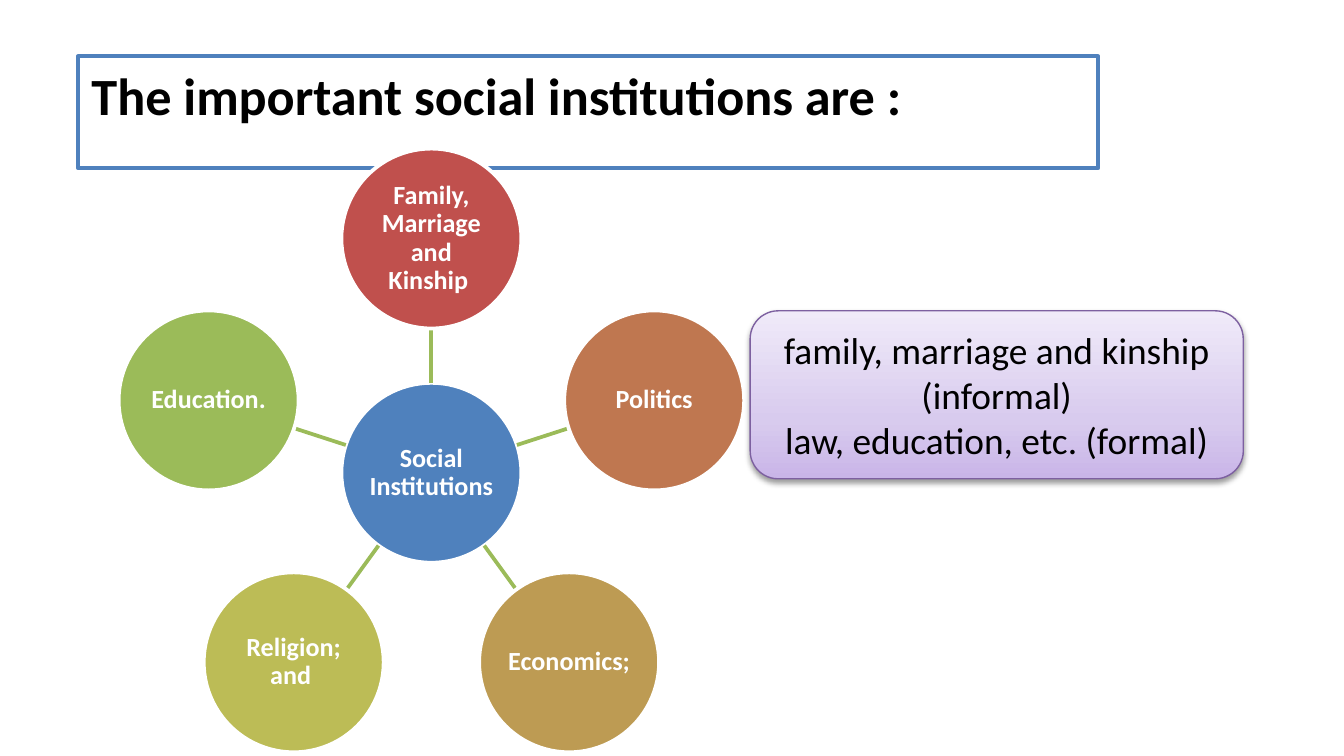
from copy import deepcopy
from dataclasses import dataclass
from math import cos, radians, sin

from lxml.etree import SubElement
from pptx import Presentation
from pptx.dml.color import RGBColor
from pptx.enum.shapes import MSO_CONNECTOR, MSO_SHAPE
from pptx.enum.text import MSO_ANCHOR, MSO_AUTO_SIZE, PP_ALIGN
from pptx.oxml.ns import qn
from pptx.util import Pt


@dataclass(frozen=True)
class Theme:
    font: str = "Calibri"
    title_size: int = 28
    note_size: int = 20
    circle_size: int = 14
    ink: str = "000000"
    paper: str = "FFFFFF"
    blue: str = "4F81BD"
    green: str = "9BBB59"
    note_line: str = "7D60A0"
    note_gradient: tuple = ((0, "C9B5E8"), (0.35, "D8CBEE"), (1, "F0EAF9"))


THEME = Theme()
HUB = (231.1, 253.3)
DIAMETER = 96.4
ORBIT = 125.5
SPOKE_START, SPOKE_END = 48.2, 77
# Clockwise from the top
INSTITUTIONS = (
    ("Family, Marriage and Kinship ", "C0504D"),
    ("Politics", "BF7750"),
    ("Economics;", "BD9B53"),
    ("Religion; and ", "BCBC56"),
    ("Education.", THEME.green),
)


def around_hub(distance, angle):
    """Point at a distance from the hub, angle in degrees clockwise from the top."""
    turn = radians(angle)
    return HUB[0] + distance * sin(turn), HUB[1] - distance * cos(turn)


class SlideBuilder:
    def __init__(self, page, theme):
        self.page = page
        self.theme = theme

    def style_line(self, line, color, width):
        line.color.rgb = RGBColor.from_string(color)
        line.width = Pt(width)

    def style_box(self, box, fill, line, width):
        box.fill.solid()
        box.fill.fore_color.rgb = RGBColor.from_string(fill)
        self.style_line(box.line, line, width)

    def set_text(self, frame, lines, size, color, bold=False, align=PP_ALIGN.CENTER, spacing=1.0):
        frame.word_wrap = True
        frame.text = "\n".join(lines)
        for para in frame.paragraphs:
            para.alignment = align
            para.line_spacing = spacing
            font = para.font
            font.name = self.theme.font
            font.size = Pt(size)
            font.bold = bold
            font.color.rgb = RGBColor.from_string(color)

    def title(self, text, left, top, width, height):
        box = self.page.shapes.title
        box.left, box.top, box.width, box.height = map(Pt, (left, top, width, height))
        self.style_box(box, self.theme.paper, self.theme.blue, 2)
        frame = box.text_frame
        self.set_text(frame, [text], self.theme.title_size, self.theme.ink, True, PP_ALIGN.LEFT)
        frame.vertical_anchor = MSO_ANCHOR.TOP
        frame.auto_size = MSO_AUTO_SIZE.SHAPE_TO_FIT_TEXT

    def circle(self, text, center, fill):
        left, top = (value - DIAMETER / 2 for value in center)
        box = self.page.shapes.add_shape(
            MSO_SHAPE.OVAL, Pt(left), Pt(top), Pt(DIAMETER), Pt(DIAMETER))
        box.shadow.inherit = False
        self.style_box(box, fill, self.theme.paper, 2)
        frame = box.text_frame
        frame.margin_left = frame.margin_right = Pt(0.7)
        frame.margin_top = frame.margin_bottom = Pt(0.7)
        frame.vertical_anchor = MSO_ANCHOR.MIDDLE
        self.set_text(frame, [text], self.theme.circle_size, self.theme.paper, True, spacing=0.9)

    def spoke(self, start, end):
        line = self.page.shapes.add_connector(
            MSO_CONNECTOR.STRAIGHT, *(Pt(value) for value in (*start, *end)))
        self.style_line(line.line, self.theme.green, 2)
        SubElement(line._element.spPr, qn("a:effectLst"))

    def note(self, lines, left, top, width, height):
        box = self.page.shapes.add_shape(
            MSO_SHAPE.ROUNDED_RECTANGLE, Pt(left), Pt(top), Pt(width), Pt(height))
        self.shade(box)
        self.style_line(box.line, self.theme.note_line, 0.75)
        self.drop_shadow(box)
        box.text_frame.vertical_anchor = MSO_ANCHOR.MIDDLE
        self.set_text(box.text_frame, lines, self.theme.note_size, self.theme.ink)

    def shade(self, box):
        """Fill the box with the note gradient, running from bottom to top."""
        box.fill.gradient()
        box.fill.gradient_angle = 90
        stop_list = box._element.spPr.find(qn("a:gradFill")).find(qn("a:gsLst"))
        stop_list.append(deepcopy(stop_list[0]))
        for stop, (position, color) in zip(box.fill.gradient_stops, self.theme.note_gradient):
            stop.position = position
            stop.color.rgb = RGBColor.from_string(color)

    def drop_shadow(self, box):
        box.shadow.inherit = False
        effects = box._element.spPr.find(qn("a:effectLst"))
        shadow = SubElement(effects, qn("a:outerShdw"), blurRad=str(Pt(3.1)),
                            dist=str(Pt(1.6)), dir="5400000", rotWithShape="0")
        color = SubElement(shadow, qn("a:srgbClr"), val=self.theme.ink)
        SubElement(color, qn("a:alpha"), val="38000")


def main():
    deck = Presentation()
    deck.slide_width, deck.slide_height = Pt(720), Pt(405)
    builder = SlideBuilder(deck.slides.add_slide(deck.slide_layouts[5]), THEME)

    builder.title("The important social institutions are :", 41.8, 30.2, 546.5, 41.2)
    builder.circle("Social Institutions", HUB, THEME.blue)
    step = 360 / len(INSTITUTIONS)
    for index, (name, color) in enumerate(INSTITUTIONS):
        angle = index * step
        builder.spoke(around_hub(SPOKE_START, angle), around_hub(SPOKE_END, angle))
        builder.circle(name, around_hub(ORBIT, angle), color)
    builder.note(
        ["family, marriage and kinship (informal)", "law, education, etc. (formal)"],
        401.9, 166.5, 264.2, 90)

    deck.save("out.pptx")


if __name__ == "__main__":
    main()
